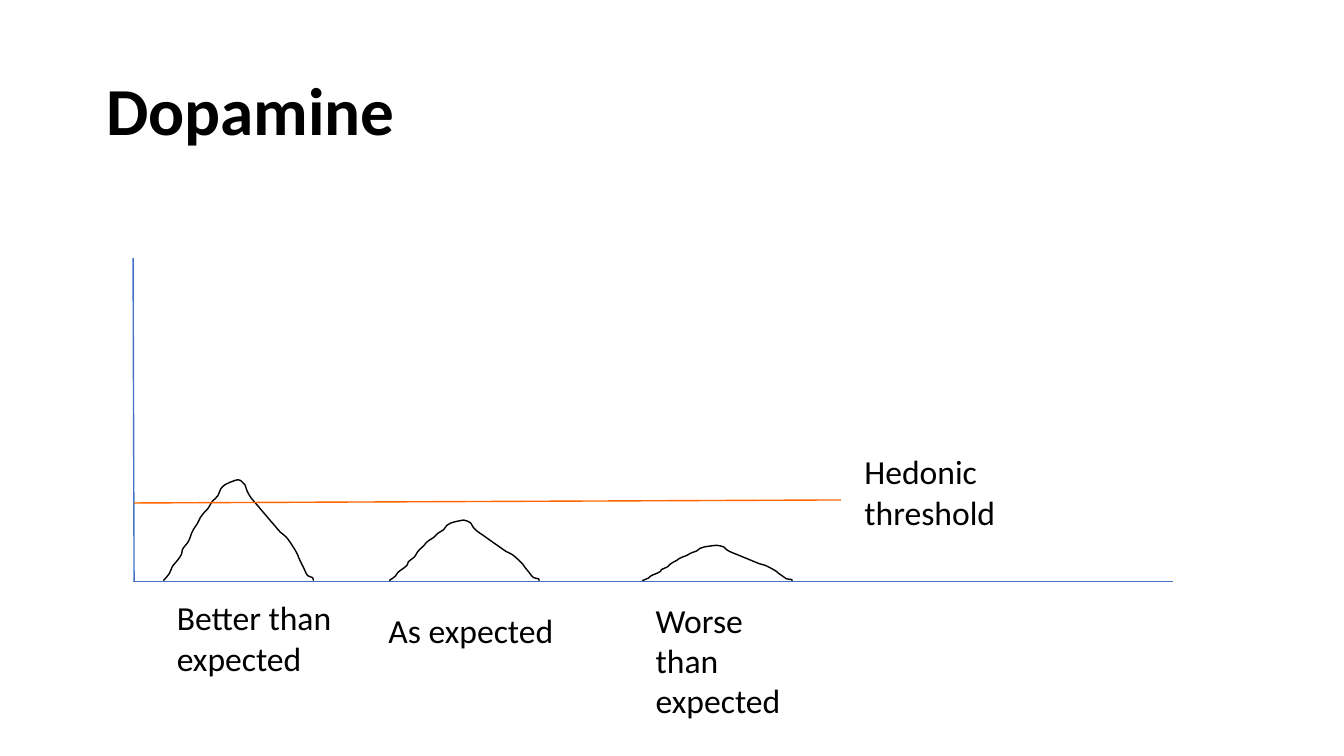
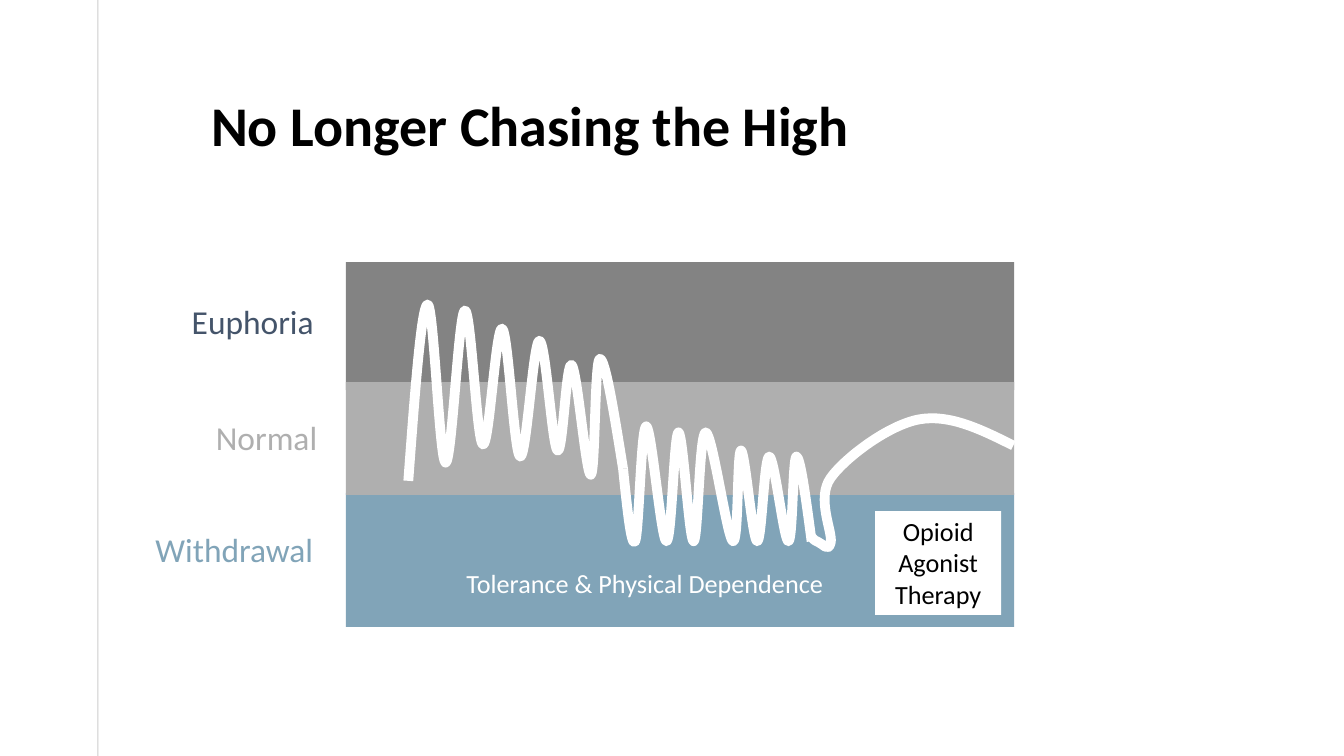
from dataclasses import dataclass

from lxml.etree import SubElement
from pptx import Presentation
from pptx.dml.color import RGBColor
from pptx.enum.shapes import MSO_CONNECTOR as Connector, MSO_SHAPE as Shape
from pptx.enum.text import MSO_ANCHOR as Anchor, MSO_AUTO_SIZE as AutoSize, PP_ALIGN as Align
from pptx.oxml.ns import qn
from pptx.util import Inches, Pt


@dataclass(frozen=True)
class Theme:
    font: str = "Calibri"
    black: str = "000000"
    white: str = "FFFFFF"
    axis: str = "4472C4"
    threshold: str = "FF6600"
    navy: str = "44546A"
    dark_gray: str = "838383"
    light_gray: str = "AFAFAF"
    blue: str = "81A4B8"
    label_size: float = 24
    state_size: float = 23.9
    note_size: float = 18.7
    thin: float = 0.75
    line: float = 1
    thick: float = 7


theme = Theme()


def write_text(box, text, size, color, inset, align=Align.LEFT, anchor=Anchor.TOP, bold=False):
    """Fill a box with one formatted paragraph; inset is (sides, top and bottom) in points."""
    frame = box.text_frame
    frame.text = text
    frame.word_wrap = True
    frame.auto_size = AutoSize.NONE
    frame.vertical_anchor = anchor
    frame.margin_left = frame.margin_right = Pt(inset[0])
    frame.margin_top = frame.margin_bottom = Pt(inset[1])
    para = frame.paragraphs[0]
    para.alignment = align
    font = para.runs[0].font
    font.name, font.size, font.bold = theme.font, Pt(size), bold
    font.color.rgb = RGBColor.from_string(color)
    return para


def draw_line(page, points, color, width):
    """Draw a connector through two points, or a smooth open curve through more."""
    knots = [(Inches(x), Inches(y)) for x, y in points]
    last = len(knots) - 1
    if last == 1:
        line = page.shapes.add_connector(Connector.STRAIGHT, *knots[0], *knots[1])
        SubElement(line._element.spPr, qn("a:effectLst"))
    else:
        builder = page.shapes.build_freeform(*knots[0])
        builder.add_line_segments(knots[1:], close=False)
        line = builder.convert_to_shape()
        line.fill.background()
        line.shadow.inherit = False
        # Handles are a sixth of the chord between neighbours; end handles lie midway
        for i, segment in enumerate(list(line._element.iter(qn("a:lnTo")))):
            before, start, end, after = (
                knots[max(i - 1, 0)], knots[i], knots[i + 1], knots[min(i + 2, last)])
            leave = [s + (e - b) / 6 for b, s, e in zip(before, start, end)]
            arrive = [e - (a - s) / 6 for s, e, a in zip(start, end, after)]
            if i == 0:
                leave = [(s + h) / 2 for s, h in zip(start, arrive)]
            elif i == last - 1:
                arrive = [(h + e) / 2 for h, e in zip(leave, end)]
            curve = SubElement(segment.getparent(), qn("a:cubicBezTo"))
            for x, y in (leave, arrive, end):
                SubElement(curve, qn("a:pt"), x=str(round(x - line.left)), y=str(round(y - line.top)))
            segment.getparent().replace(segment, curve)
    line.line.color.rgb = RGBColor.from_string(color)
    line.line.width = Pt(width)
    return line


deck = Presentation()
deck.slide_width, deck.slide_height = Inches(13.33), Inches(7.5)

# Pages and their titles: text, position, size, anchor, inset
titles = [
    ("Dopamine", (0.92, 0.4, 11.5, 1.45), 48, Anchor.MIDDLE, (9.6, 4.8)),
    ("No Longer Chasing the High", (1.96, 0.62, 10.4, 1.09), 40, Anchor.BOTTOM, (9.6, 9.6)),
]
pages = []
for text, place, size, anchor, inset in titles:
    page = deck.slides.add_slide(deck.slide_layouts[5])
    title = page.shapes.title
    title.left, title.top, title.width, title.height = map(Inches, place)
    para = write_text(title, text, size, theme.black, inset, anchor=anchor, bold=True)
    para.line_spacing = 0.9
    pages.append(page)
dopamine, chasing = pages

# Dopamine: axes
draw_line(dopamine, [(1.32, 2.56), (1.33, 5.77)], theme.axis, theme.line)
draw_line(dopamine, [(1.32, 5.77), (11.63, 5.77)], theme.axis, theme.line)

# Dopamine: one response profile (inches across, share of peak), three peak heights
profile = [
    (0, 0), (0.06, 0.07), (0.09, 0.14), (0.14, 0.2), (0.18, 0.26), (0.19, 0.31),
    (0.25, 0.39), (0.28, 0.47), (0.3, 0.51), (0.34, 0.57), (0.37, 0.63), (0.41, 0.68),
    (0.44, 0.71), (0.47, 0.76), (0.49, 0.79), (0.54, 0.84), (0.57, 0.91), (0.61, 0.95),
    (0.65, 0.97), (0.74, 1), (0.78, 0.98), (0.81, 0.95), (0.83, 0.89), (0.87, 0.82),
    (0.93, 0.75), (0.98, 0.69), (1.04, 0.62), (1.1, 0.55), (1.16, 0.48), (1.22, 0.43),
    (1.29, 0.33), (1.33, 0.26), (1.35, 0.21), (1.39, 0.13), (1.43, 0.05), (1.48, 0.03),
    (1.49, 0),
]
for left, peak in [(1.62, 1), (6.37, 0.35), (3.86, 0.6)]:
    bump = [(left + x, 5.76 - peak * share) for x, share in profile]
    draw_line(dopamine, bump, theme.black, theme.line)
draw_line(dopamine, [(1.33, 4.99), (8.34, 4.96)], theme.threshold, theme.line)

# Dopamine: labels
for text, place in [
    ("Better than expected", (1.62, 5.86, 2.1, 0.71)),
    ("As expected", (3.72, 5.98, 1.93, 0.4)),
    ("Worse than expected", (6.37, 5.88, 1.58, 1.01)),
    ("Hedonic threshold", (8.44, 4.41, 2.63, 0.71)),
]:
    label = dopamine.shapes.add_textbox(*map(Inches, place))
    write_text(label, text, theme.label_size, theme.black, (9.6, 4.8))

# Chasing: right edge line behind the bands
draw_line(chasing, [(10.05, 3.26), (10.05, 4.41)], theme.white, theme.thin)

# Chasing: bands of the three states
for top, height, color in [
    (2.6, 1.27, theme.dark_gray),
    (4.89, 1.33, theme.blue),
    (3.79, 1.12, theme.light_gray),
]:
    band = chasing.shapes.add_shape(
        Shape.RECTANGLE, *map(Inches, (3.43, top, 6.63, height)))
    band.shadow.inherit = False
    band.fill.solid()
    band.fill.fore_color.rgb = RGBColor.from_string(color)
    band.line.fill.background()

# Chasing: state names, all ending at the same right edge
for text, left, top, color in [
    ("Euphoria", 1.86, 2.94, theme.navy),
    ("Normal", 2.1, 4.1, theme.light_gray),
    ("Withdrawal", 1.5, 5.21, theme.blue),
]:
    state = chasing.shapes.add_textbox(*map(Inches, (left, top, 3.31 - left, 0.49)))
    write_text(state, text, theme.state_size, color, (3, 3))

# Chasing: notes on the lowest band
for text, place, color, fill in [
    ("Tolerance & Physical Dependence", (4.23, 5.59, 4.33, 0.4), theme.white, None),
    ("Opioid Agonist Therapy", (8.68, 5.07, 1.25, 1.03), theme.black, theme.white),
]:
    note = chasing.shapes.add_textbox(*map(Inches, place))
    if fill:
        note.fill.solid()
        note.fill.fore_color.rgb = RGBColor.from_string(fill)
    write_text(note, text, theme.note_size, color, (3, 3), Align.CENTER)

# Chasing: smooth curves through turning points
dependence = [
    (6.18, 4.65), (6.3, 5.37), (6.41, 4.23), (6.61, 5.37), (6.73, 4.29), (6.88, 5.37),
    (7, 4.29), (7.27, 5.37), (7.35, 4.47), (7.51, 5.37), (7.63, 4.53), (7.82, 5.37),
    (7.9, 4.53), (8.05, 5.37),
]
euphoria = [
    (4.05, 4.77), (4.24, 3.02), (4.42, 4.59), (4.61, 3.08), (4.79, 4.41), (4.98, 3.26),
    (5.16, 4.53), (5.35, 3.38), (5.53, 4.47), (5.67, 3.62), (5.86, 4.71), (5.95, 3.56),
    (6.18, 4.65),
]
therapy = [(8.05, 5.33), (8.12, 5.38), (8.24, 5.38), (8.24, 4.74), (9.12, 4.16), (10.05, 4.42)]
for knots in (dependence, euphoria, therapy):
    draw_line(chasing, knots, theme.white, theme.thick)

# Chasing: faint vertical rule
rule = draw_line(chasing, [(0.97, 0), (0.97, 7.5)], theme.black, theme.thin)
rule_color = rule.line._ln.find(".//" + qn("a:srgbClr"))
SubElement(rule_color, qn("a:alpha"), val="20000")

deck.save("out.pptx")
